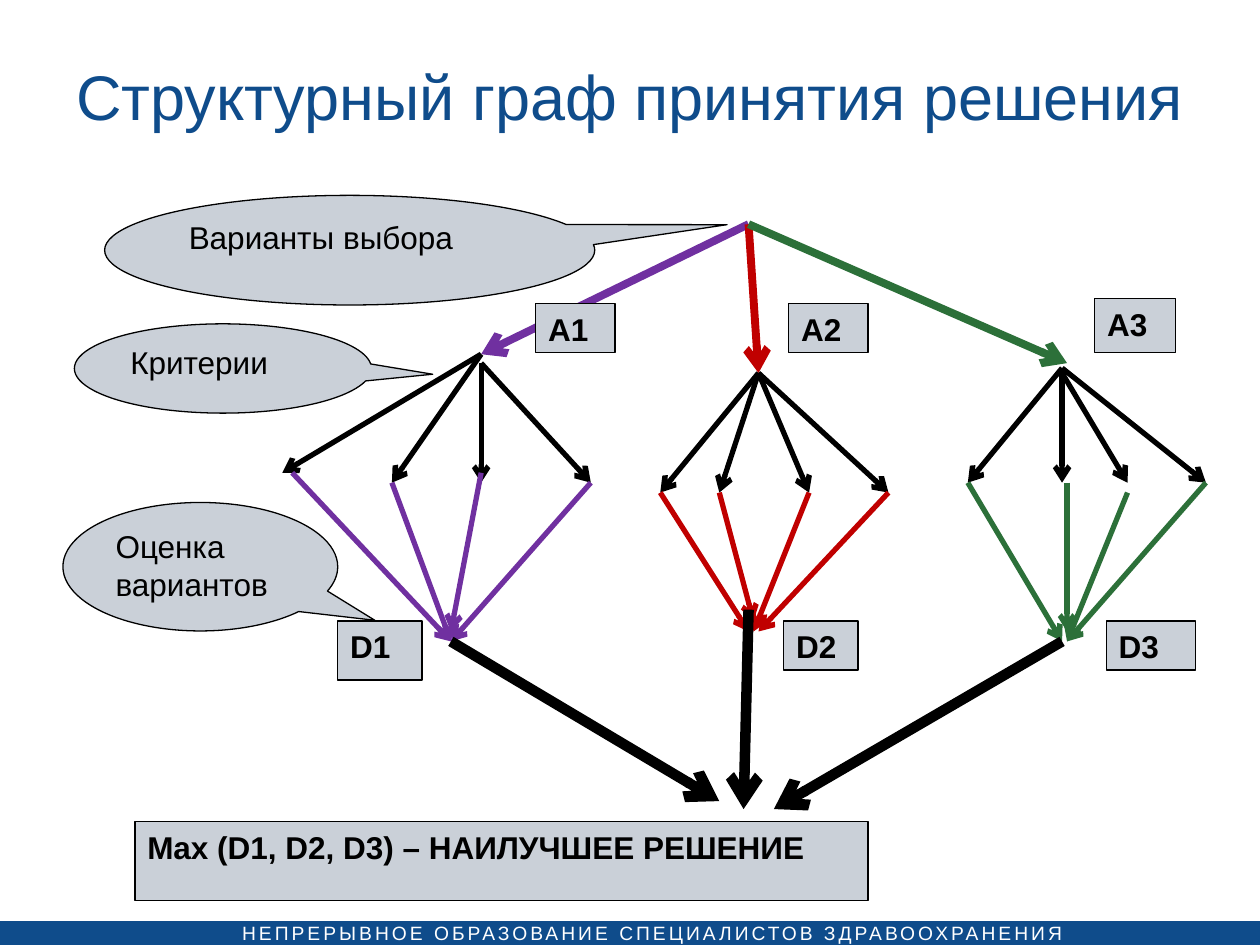
from lxml.etree import SubElement
from pptx import Presentation
from pptx.dml.color import RGBColor
from pptx.enum.shapes import MSO_CONNECTOR as Connector, MSO_SHAPE as Shape
from pptx.enum.text import MSO_ANCHOR as Anchor, PP_ALIGN as Align
from pptx.oxml.ns import qn
from pptx.util import Cm, Pt

BLUE = RGBColor(0x0F, 0x4C, 0x8B)
GREY = RGBColor(0xCA, 0xD0, 0xD8)
PURPLE = RGBColor(0x70, 0x30, 0xA0)
RED = RGBColor(0xC0, 0x00, 0x00)
GREEN = RGBColor(0x2C, 0x70, 0x39)
BLACK = RGBColor(0, 0, 0)
WHITE = RGBColor(255, 255, 255)

TITLE = "Структурный граф принятия решения"
FOOTER = "НЕПРЕРЫВНОЕ ОБРАЗОВАНИЕ СПЕЦИАЛИСТОВ ЗДРАВООХРАНЕНИЯ"
ROOT = (15.09, 4.52)

# Each criterion: arrow from the option, then arrow to its estimate
OPTIONS = [
    (PURPLE, (9.7, 7.14), [
        ((9.7, 7.14), (5.69, 9.53), (5.89, 9.53), (9.09, 12.93)),
        ((9.7, 7.14), (7.9, 9.73), (7.9, 9.73), (9.09, 12.93)),
        ((9.7, 7.32), (9.7, 9.73), (9.7, 9.53), (9.09, 12.73)),
        ((9.7, 7.32), (11.91, 9.73), (11.91, 9.73), (9.09, 12.93)),
    ]),
    (RED, (15.29, 7.52), [
        ((15.29, 7.52), (13.31, 9.93), (13.31, 9.93), (15.09, 12.73)),
        ((15.29, 7.52), (14.5, 9.93), (14.5, 9.93), (15.19, 12.52)),
        ((15.29, 7.52), (16.31, 9.93), (16.31, 9.93), (15.19, 12.73)),
        ((15.29, 7.52), (17.91, 9.93), (17.91, 9.93), (15.29, 12.73)),
    ]),
    (GREEN, (21.51, 7.32), [
        ((21.41, 7.42), (19.51, 9.73), (19.51, 9.73), (21.41, 12.93)),
        ((21.41, 7.42), (21.41, 9.73), (21.51, 9.73), (21.51, 12.73)),
        ((21.41, 7.52), (22.73, 9.73), (22.73, 9.93), (21.51, 12.93)),
        ((21.41, 7.42), (24.31, 9.73), (24.31, 9.73), (21.51, 12.93)),
    ]),
]
RESULTS = [
    ((9.09, 12.93), (14.5, 16.15)),
    ((15.09, 12.29), (14.99, 16.31)),
    ((21.41, 12.93), (15.6, 16.31)),
]
BOXES = [
    ("D1", 6.81, 12.52, 1.7, 1.19),
    ("D2", 15.8, 12.52, 1.5, 0.99),
    ("D3", 22.3, 12.52, 1.8, 0.99),
    ("Max (D1, D2, D3) – НАИЛУЧШЕЕ РЕШЕНИЕ", 2.72, 16.56, 14.78, 1.6),
    ("А1", 10.8, 6.12, 1.6, 0.99),
    ("А2", 15.9, 6.12, 1.6, 0.99),
    ("А3", 22.07, 6.02, 1.63, 1.09),
]
CALLOUTS = [
    ("Варианты выбора", (2.11, 3.94, 9.88, 2.21), (0.77, -0.233)),
    ("Критерии", (1.5, 6.53, 5.99, 1.8), (0.706, 0.064)),
    ("Оценка вариантов", (1.27, 10.13, 5.54, 2.59), (0.635, 0.417)),
]


def write(shape, text, size, color, bold=False, align=Align.LEFT, anchor=Anchor.TOP):
    frame = shape.text_frame
    frame.word_wrap = True
    frame.vertical_anchor = anchor
    para = frame.paragraphs[0]
    para.text = text
    para.alignment = align
    font = para.font
    font.name, font.size, font.bold = "Arial", Pt(size), bold
    font.color.rgb = color
    return frame


def add_text(page, text, place, size, color, **style):
    box = page.shapes.add_textbox(*map(Cm, place))
    return write(box, text, size, color, **style)


def add_panel(page, kind, place, fill):
    panel = page.shapes.add_shape(kind, *map(Cm, place))
    panel.shadow.inherit = False
    panel.fill.solid()
    panel.fill.fore_color.rgb = fill
    panel.line.fill.background()
    return panel


def add_label(page, kind, place, text, bold):
    label = add_panel(page, kind, place, GREY)
    label.line.color.rgb = BLACK
    label.line.width = Pt(0.75)
    write(label, text, 18, BLACK, bold)
    return label


def add_arrow(page, start, end, color, width):
    arrow = page.shapes.add_connector(Connector.STRAIGHT, *map(Cm, start + end))
    arrow.line.color.rgb = color
    arrow.line.width = Pt(width)
    SubElement(arrow.line._get_or_add_ln(), qn("a:tailEnd"), type="arrow")
    SubElement(arrow._element.spPr, qn("a:effectLst"))


def main():
    deck = Presentation()
    deck.slide_width, deck.slide_height = Cm(25.4), Cm(19.05)
    page = deck.slides.add_slide(deck.slide_layouts[6])

    add_panel(page, Shape.RECTANGLE, (-0.1, 18.57, 25.5, 0.56), BLUE)
    footer = add_text(page, FOOTER, (4.88, 18.57, 16.84, 0.48), 11, WHITE)
    footer.margin_left = footer.margin_right = footer.margin_top = footer.margin_bottom = 0
    footer.paragraphs[0].runs[0].font._element.set("spc", "170")
    add_text(page, TITLE, (1.27, 0.33, 22.86, 3.18), 36, BLUE,
             align=Align.CENTER, anchor=Anchor.MIDDLE)

    for color, tip, _ in OPTIONS:
        add_arrow(page, ROOT, tip, color, 4.5)
    for _, _, criteria in OPTIONS:
        for start, end, _, _ in criteria:
            add_arrow(page, start, end, BLACK, 3)
    for color, _, criteria in OPTIONS:
        for _, _, start, end in criteria:
            add_arrow(page, start, end, color, 3)
    for start, end in RESULTS:
        add_arrow(page, start, end, BLACK, 6)

    for text, *place in BOXES:
        add_label(page, Shape.RECTANGLE, place, text, True)
    for text, place, pointer in CALLOUTS:
        callout = add_label(page, Shape.OVAL_CALLOUT, place, text, False)
        callout.adjustments[0], callout.adjustments[1] = pointer

    deck.save("out.pptx")


if __name__ == "__main__":
    main()
